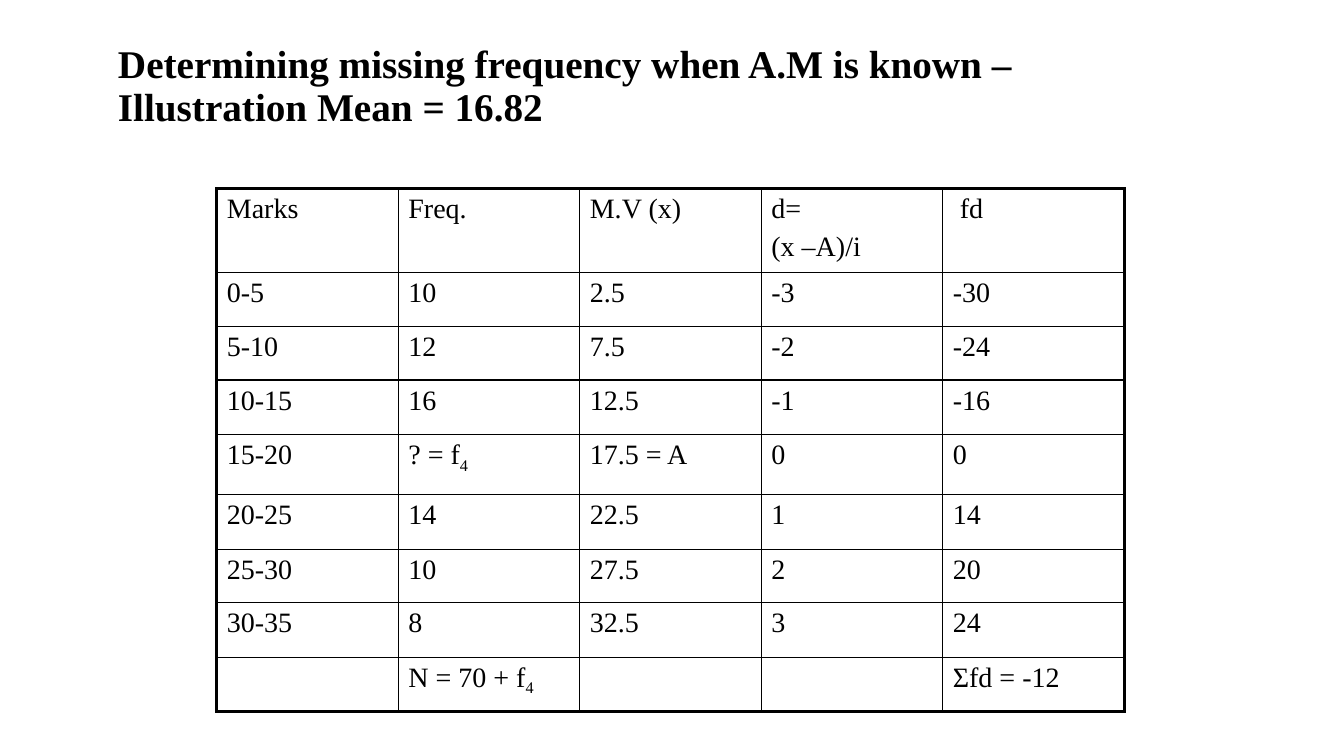
from lxml.etree import SubElement
from pptx import Presentation
from pptx.dml.color import RGBColor
from pptx.enum.text import MSO_ANCHOR, MSO_AUTO_SIZE, PP_ALIGN
from pptx.oxml.ns import qn
from pptx.util import Inches, Pt

BLACK = RGBColor(0x00, 0x00, 0x00)
FONT = "Times New Roman"
THIN, THICK = Pt(1), Pt(2.25)
SUBSCRIPT = "_"
ROW_HEIGHTS = [0.83, 0.54, 0.53, 0.54, 0.6, 0.54, 0.53, 0.54, 0.54]
COLUMN_WIDTH = 1.8
FREQUENCIES = [
    ["Marks", "Freq.", "M.V (x)", "d=\n(x –A)/i", "fd"],
    ["0-5", "10", "2.5", "-3", "-30"],
    ["5-10", "12", "7.5", "-2", "-24"],
    ["10-15", "16", "12.5", "-1", "-16"],
    ["15-20", "? = f_4", "17.5 = A", "0", "0"],
    ["20-25", "14", "22.5", "1", "14"],
    ["25-30", "10", "27.5", "2", "20"],
    ["30-35", "8", "32.5", "3", "24"],
    ["", "N = 70 + f_4", "", "", "Σfd = -12"],
]


def add_run(paragraph, text, size, bold=False):
    """Add one formatted run and return it."""
    run = paragraph.add_run()
    run.text = text
    run.font.name = FONT
    run.font.size = Pt(size)
    run.font.bold = bold
    run.font.color.rgb = BLACK
    return run


def format_title(title):
    """Place the title placeholder and write its text."""
    title.left, title.top = Inches(1.17), Inches(0.43)
    title.width, title.height = Inches(9.63), Inches(0.86)
    frame = title.text_frame
    frame.word_wrap = True
    frame.auto_size = MSO_AUTO_SIZE.NONE
    frame.vertical_anchor = MSO_ANCHOR.MIDDLE
    frame.margin_left = frame.margin_right = frame.margin_bottom = 0
    frame.margin_top = Inches(0.01)
    heading = frame.paragraphs[0]
    heading.alignment = PP_ALIGN.LEFT
    heading.line_spacing = 0.9
    add_run(heading, "Determining missing frequency when A.M is known – ", 28, True)
    add_run(heading, "Illustration Mean = 16.82", 28, True)


def write_cell(cell, text):
    """Write the lines of a cell, lowering what follows the subscript mark."""
    for index, line in enumerate(text.split("\n")):
        frame = cell.text_frame
        paragraph = frame.add_paragraph() if index else frame.paragraphs[0]
        paragraph.space_before = Pt(5 if index else 0)
        base, _, lowered = line.partition(SUBSCRIPT)
        if base:
            add_run(paragraph, base, 20)
        if lowered:
            subscript = add_run(paragraph, lowered, 20)
            subscript.font._element.set("baseline", "-24000")


def set_borders(cell, widths):
    """Draw the black cell borders, given in left, right, top, bottom order."""
    properties = cell._tc.get_or_add_tcPr()
    for side, width in zip("LRTB", widths):
        line = SubElement(properties, qn(f"a:ln{side}"), w=str(width))
        fill = SubElement(line, qn("a:solidFill"))
        SubElement(fill, qn("a:srgbClr"), val=str(BLACK))


def add_frequency_table(slide):
    """Add the frequency table with a heavier outer border."""
    last_row, last_column = len(FREQUENCIES) - 1, len(FREQUENCIES[0]) - 1
    table = slide.shapes.add_table(
        last_row + 1, last_column + 1, Inches(2.15), Inches(1.87),
        Inches(COLUMN_WIDTH * (last_column + 1)), Inches(sum(ROW_HEIGHTS)),
    ).table
    table.first_row = table.horz_banding = False
    for column in table.columns:
        column.width = Inches(COLUMN_WIDTH)
    for r, (height, values) in enumerate(zip(ROW_HEIGHTS, FREQUENCIES)):
        table.rows[r].height = Inches(height)
        for c, value in enumerate(values):
            cell = table.cell(r, c)
            cell.margin_left = Inches(0.17 if value == "fd" else 0.1)
            cell.margin_top = Inches(0.05)
            cell.margin_right = cell.margin_bottom = 0
            write_cell(cell, value)
            outer = (c == 0, c == last_column, r == 0, r == last_row)
            set_borders(cell, [THICK if edge else THIN for edge in outer])
            cell.fill.background()


def main():
    """Build the slide and save it."""
    presentation = Presentation()
    presentation.slide_width = Inches(13.33)
    presentation.slide_height = Inches(7.5)
    slide = presentation.slides.add_slide(presentation.slide_layouts[5])
    format_title(slide.shapes.title)
    add_frequency_table(slide)
    presentation.save("out.pptx")


if __name__ == "__main__":
    main()
